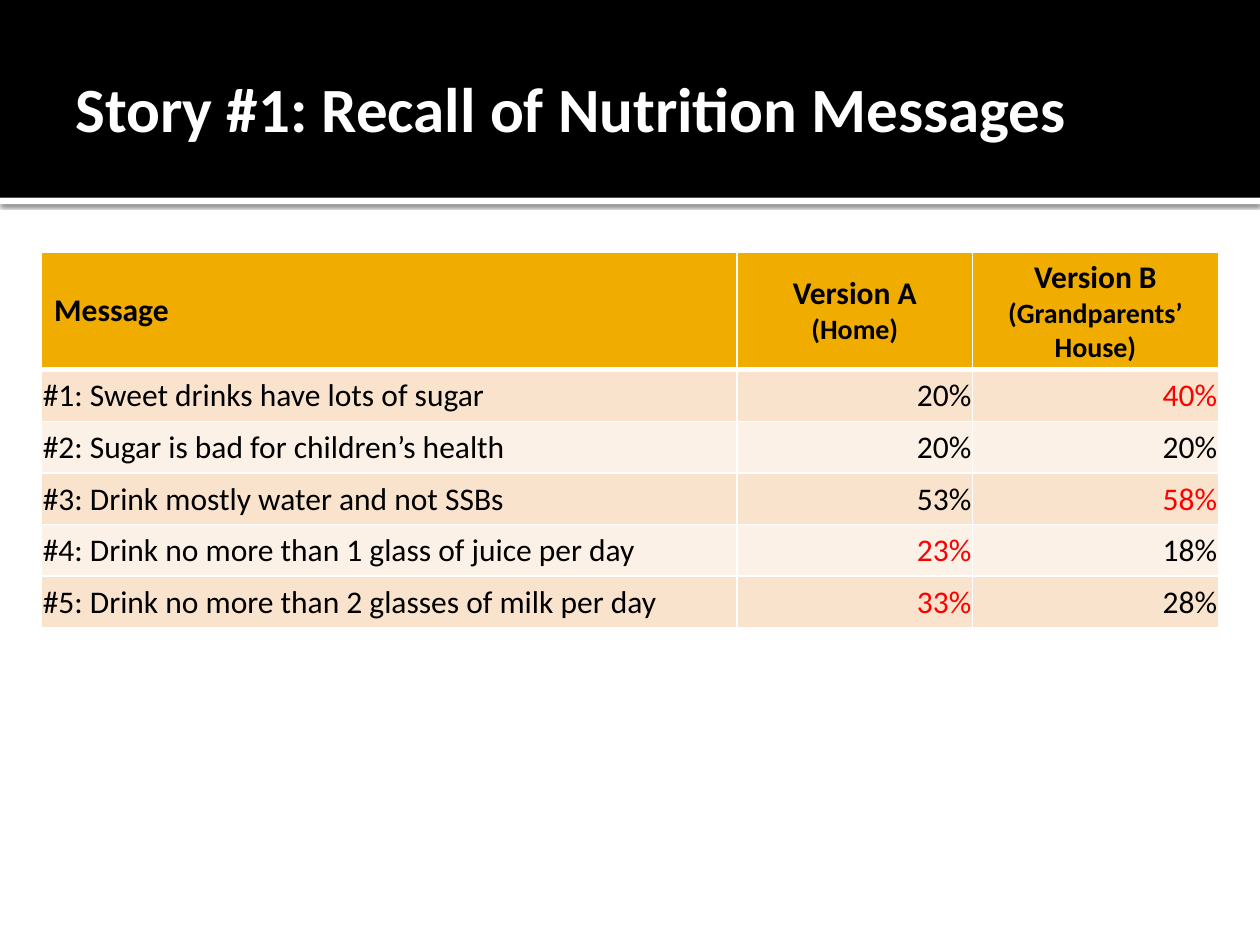
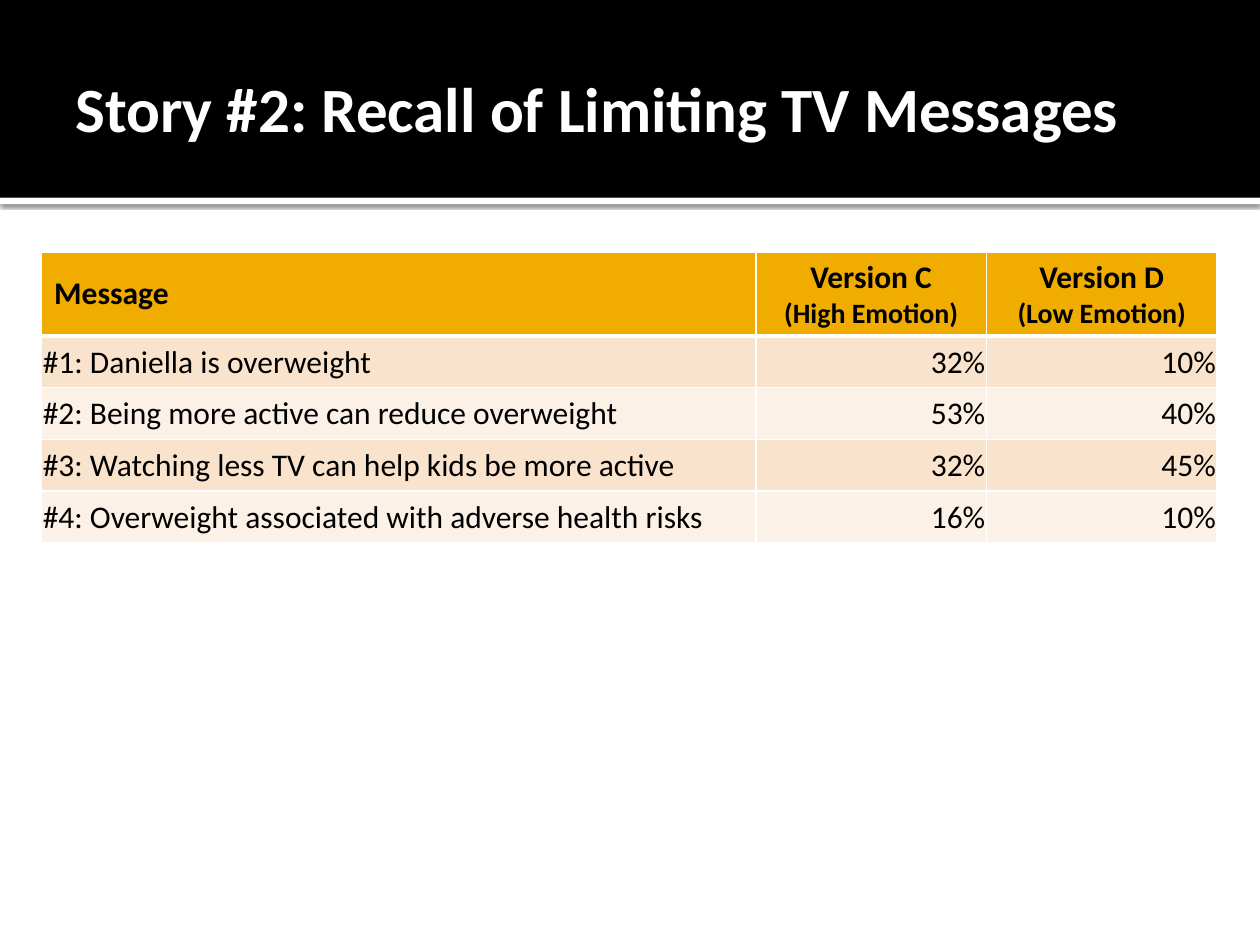
"""Build two slides that compare message recall between story versions."""
import pptx
import pptx.dml.color
import pptx.enum.shapes
import pptx.enum.text
import pptx.oxml.ns
import pptx.util
from lxml import etree

Inches, Pt = pptx.util.Inches, pptx.util.Pt
RGBColor = pptx.dml.color.RGBColor
ALIGN = pptx.enum.text.PP_ALIGN
MIDDLE = pptx.enum.text.MSO_ANCHOR.MIDDLE
qn = pptx.oxml.ns.qn

STORIES = [
    {
        "title": "Story #1: Recall of Nutrition Messages",
        "heads": [("Message",), ("Version A", "(Home)"), ("Version B", "(Grandparents’ House)")],
        "rows": [
            ("#1: Sweet drinks have lots of sugar", 20, 40),
            ("#2: Sugar is bad for children’s health", 20, 20),
            ("#3: Drink mostly water and not SSBs", 53, 58),
            ("#4: Drink no more than 1 glass of juice per day", 23, 18),
            ("#5: Drink no more than 2 glasses of milk per day", 33, 28),
        ],
        "widths": (5.52, 1.87, 1.95),
        "head_tall": 0.93,
        "mark_best": True,
    },
    {
        "title": "Story #2: Recall of Limiting TV Messages",
        "heads": [("Message",), ("Version C", "(High Emotion)"), ("Version D", "(Low Emotion)")],
        "rows": [
            ("#1: Daniella is overweight", 32, 10),
            ("#2: Being more active can reduce overweight", 53, 40),
            ("#3: Watching less TV can help kids be more active", 32, 45),
            ("#4: Overweight associated with adverse health risks", 16, 10),
        ],
        "widths": (5.67, 1.83, 1.83),
        "head_tall": 0.66,
        "mark_best": False,
    },
]

FONT = "Calibri"
BLACK = RGBColor(0, 0, 0)
WHITE = RGBColor(255, 255, 255)
RED = RGBColor(255, 0, 0)
GOLD = RGBColor(0xF0, 0xAD, 0x00)
TINTS = (RGBColor(0xF9, 0xE3, 0xCC), RGBColor(0xFC, 0xF1, 0xE7))
BAND_TALL = 1.57
ROW_TALL = 0.41
TABLE_LEFT, TABLE_TOP = 0.33, 2


def write(frame, *lines, sizes=(18, 16), color=BLACK, bold=False, align=ALIGN.LEFT):
    """Fill a text frame with one paragraph per line."""
    for i, line in enumerate(lines):
        para = frame.paragraphs[0] if i == 0 else frame.add_paragraph()
        para.alignment = align
        run = para.add_run()
        run.text = line
        font = run.font
        font.name, font.size, font.bold = FONT, Pt(sizes[i]), bold
        font.color.rgb = color


def add_bar(slide, top, tall, color):
    """Add a plain bar across the slide."""
    bar = slide.shapes.add_shape(
        pptx.enum.shapes.MSO_SHAPE.RECTANGLE, 0, Inches(top), Inches(10), Inches(tall))
    bar.shadow.inherit = False
    bar.fill.solid()
    bar.fill.fore_color.rgb = color
    bar.line.fill.background()
    return bar


def add_shade(shape):
    """Give a shape a soft shadow below it."""
    effects = shape._element.spPr.find(qn("a:effectLst"))
    shade = etree.SubElement(effects, qn("a:outerShdw"), blurRad=str(Pt(2.5)),
                             dist=str(Pt(0.8)), dir="5400000", algn="tl", rotWithShape="0")
    tone = etree.SubElement(shade, qn("a:srgbClr"), val=str(BLACK))
    etree.SubElement(tone, qn("a:alpha"), val="60000")


def add_head(slide, title):
    """Add the shared title band and its text."""
    add_shade(add_bar(slide, BAND_TALL, 0.05, WHITE))
    add_bar(slide, 0, BAND_TALL, BLACK)
    box = slide.shapes.add_textbox(Inches(0.5), Inches(0.17), Inches(9.25), Inches(1.37))
    frame = box.text_frame
    frame.word_wrap = True
    frame.vertical_anchor = MIDDLE
    frame.margin_right = Inches(0.05)
    write(frame, title, sizes=(36,), color=WHITE, bold=True)


def style_cell(cell, fill, top=1, bottom=1):
    """Set the borders, fill and anchor of a cell."""
    props = cell._tc.get_or_add_tcPr()
    for side, width in zip("LRTB", (1, 1, top, bottom)):
        line = etree.SubElement(props, qn("a:ln" + side), w=str(Pt(width)))
        paint = etree.SubElement(line, qn("a:solidFill"))
        etree.SubElement(paint, qn("a:srgbClr"), val=str(WHITE))
    cell.fill.solid()
    cell.fill.fore_color.rgb = fill
    cell.vertical_anchor = MIDDLE


def add_grid(slide, story):
    """Add the recall table of a story."""
    heads, rows, widths = story["heads"], story["rows"], story["widths"]
    talls = [story["head_tall"]] + [ROW_TALL] * len(rows)
    grid = slide.shapes.add_table(
        len(talls), len(widths), Inches(TABLE_LEFT), Inches(TABLE_TOP),
        Inches(sum(widths)), Inches(sum(talls))).table
    for col, width in zip(grid.columns, widths):
        col.width = Inches(width)
    for row, tall in zip(grid.rows, talls):
        row.height = Inches(tall)
    for c, lines in enumerate(heads):
        cell = grid.cell(0, c)
        style_cell(cell, GOLD, bottom=3)
        write(cell.text_frame, *lines, bold=True, align=ALIGN.CENTER if c else ALIGN.LEFT)
    for r, (label, *scores) in enumerate(rows, 1):
        for c, value in enumerate((label, *scores)):
            cell = grid.cell(r, c)
            style_cell(cell, TINTS[(r - 1) % 2], top=3 if r == 1 else 1)
            cell.margin_left = cell.margin_right = cell.margin_top = Inches(0.01)
            cell.margin_bottom = 0
            if c == 0:
                write(cell.text_frame, label)
            else:
                best = story["mark_best"] and value > min(scores)
                write(cell.text_frame, f"{value}%", color=RED if best else BLACK,
                      align=ALIGN.RIGHT)


def main():
    """Build and save the deck."""
    deck = pptx.Presentation()
    deck.slide_width, deck.slide_height = Inches(10), Inches(7.5)
    for story in STORIES:
        slide = deck.slides.add_slide(deck.slide_layouts[6])
        add_head(slide, story["title"])
        add_grid(slide, story)
    deck.save("out.pptx")


if __name__ == "__main__":
    main()
